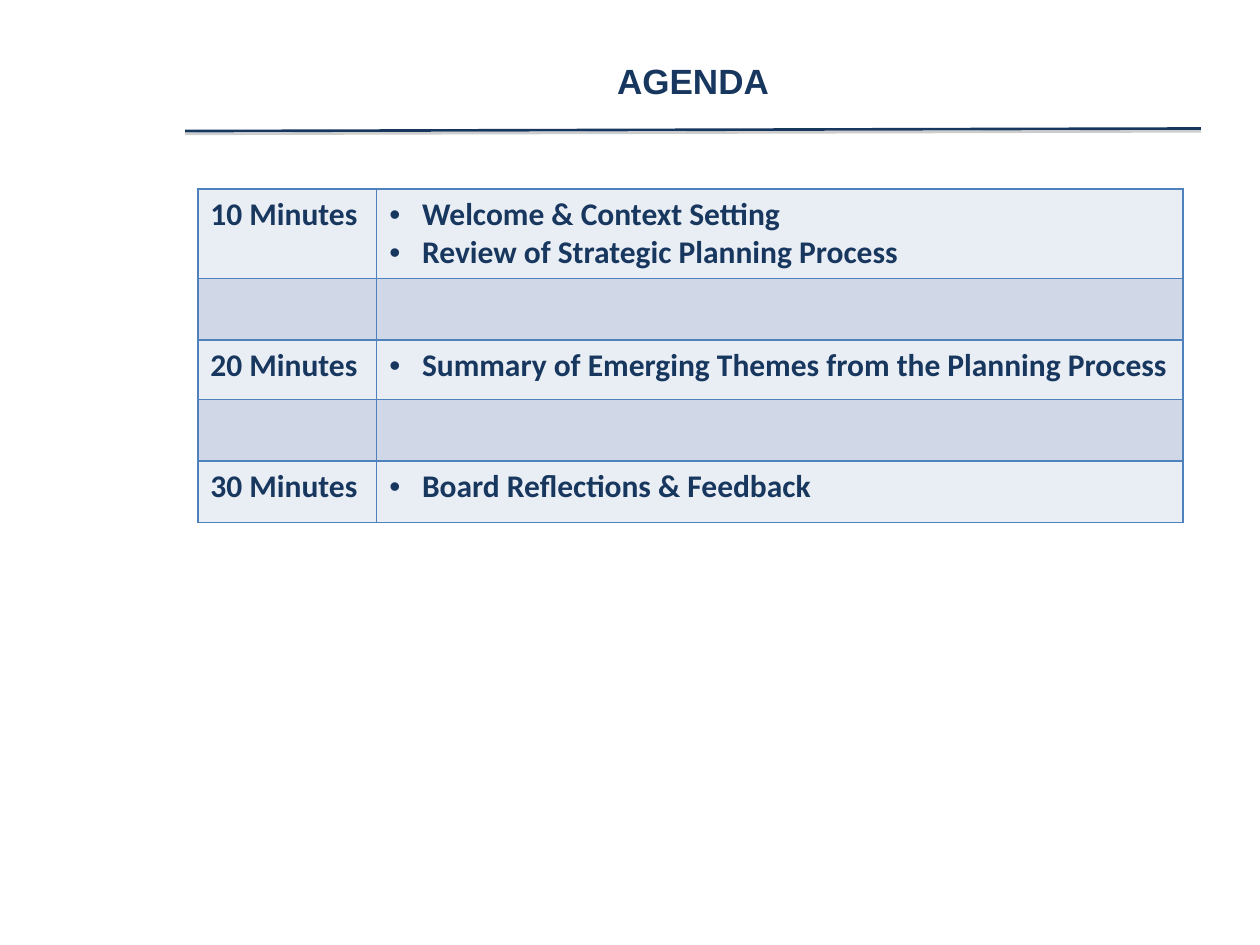
import pptx
import pptx.util
import pptx.oxml
import pptx.oxml.ns
from pptx.dml.color import RGBColor
from pptx.enum.shapes import MSO_CONNECTOR
from pptx.enum.text import MSO_ANCHOR, PP_ALIGN

NAVY = RGBColor(0x17, 0x37, 0x5E)
BORDER_BLUE = RGBColor(0x4F, 0x81, 0xBD)
PALE_BAND = RGBColor(0xE9, 0xED, 0xF4)
DEEP_BAND = RGBColor(0xD0, 0xD8, 0xE8)
SHADOW_GRAY = RGBColor(0x80, 0x80, 0x80)

WIDTH = pptx.util.Inches(10)
HEIGHT = pptx.util.Inches(7.5)
COLUMN_SHARES = (14.2, 64)
ROW_SHARES = (9.47, 6.53, 6.27, 6.53, 6.53)
AGENDA = (
    ("10 Minutes", ("Welcome & Context Setting",
                    "Review of Strategic Planning Process")),
    ("", ()),
    ("20 Minutes", ("Summary of Emerging Themes from the Planning Process",)),
    ("", ()),
    ("30 Minutes", ("Board Reflections & Feedback",)),
)


def across(percent):
    return pptx.util.Emu(round(WIDTH * percent / 100))


def down(percent):
    return pptx.util.Emu(round(HEIGHT * percent / 100))


def xml(tag, content="", **attributes):
    """Make a DrawingML element from its tag, inner markup and attributes."""
    listed = "".join(f' {name}="{value}"' for name, value in attributes.items())
    space = pptx.oxml.ns.nsdecls("a")
    return pptx.oxml.parse_xml(f"<a:{tag} {space}{listed}>{content}</a:{tag}>")


def write(frame, *lines, font="Calibri", size=18, align=PP_ALIGN.LEFT, bullet=False):
    """Fill a text frame with one bold navy paragraph per line."""
    for index, line in enumerate(lines):
        para = frame.add_paragraph() if index else frame.paragraphs[0]
        para.alignment = align
        if bullet:
            indent = pptx.util.Inches(0.26)
            properties = para._p.get_or_add_pPr()
            properties.set("marL", str(indent))
            properties.set("indent", str(-indent))
            properties.append(xml("buFont", typeface="Arial"))
            properties.append(xml("buChar", char="•"))
        span = para.add_run()
        span.text = line
        span.font.name = font
        span.font.size = pptx.util.Pt(size)
        span.font.bold = True
        span.font.color.rgb = NAVY


def add_title(page, text):
    box = page.shapes.add_textbox(across(14.6), down(4), across(80.8), down(9.07))
    box.text_frame.word_wrap = True
    box.text_frame.vertical_anchor = MSO_ANCHOR.MIDDLE
    write(box.text_frame, text, font="Arial", size=20, align=PP_ALIGN.CENTER)


def add_rule(page):
    rule = page.shapes.add_connector(
        MSO_CONNECTOR.STRAIGHT, across(14.7), down(13.87), across(95.3), down(13.6))
    rule.line.color.rgb = NAVY
    rule.line.width = pptx.util.Pt(1.5)
    shadow = (f'<a:outerShdw dist="{pptx.util.Pt(1.6)}" dir="5400000" rotWithShape="0">'
              f'<a:srgbClr val="{SHADOW_GRAY}"><a:alpha val="38000"/></a:srgbClr>'
              '</a:outerShdw>')
    rule._element.spPr.append(xml("effectLst", shadow))


def style_cell(cell, color):
    """Give a cell blue borders and a solid fill."""
    properties = cell._tc.get_or_add_tcPr()
    stroke = f'<a:solidFill><a:srgbClr val="{BORDER_BLUE}"/></a:solidFill>'
    for side in ("lnL", "lnR", "lnT", "lnB"):
        properties.append(xml(side, stroke, w=pptx.util.Pt(1)))
    cell.fill.solid()
    cell.fill.fore_color.rgb = color


def add_agenda(page):
    table = page.shapes.add_table(
        len(AGENDA), len(COLUMN_SHARES), across(15.7), down(20),
        across(sum(COLUMN_SHARES)), down(sum(ROW_SHARES))).table
    for column, share in zip(table.columns, COLUMN_SHARES):
        column.width = across(share)
    for index, (duration, topics) in enumerate(AGENDA):
        row = table.rows[index]
        row.height = down(ROW_SHARES[index])
        for cell in row.cells:
            style_cell(cell, DEEP_BAND if index % 2 else PALE_BAND)
        if duration:
            write(row.cells[0].text_frame, duration)
            write(row.cells[1].text_frame, *topics, bullet=True)


def main():
    deck = pptx.Presentation()
    deck.slide_width, deck.slide_height = WIDTH, HEIGHT
    page = deck.slides.add_slide(deck.slide_layouts[6])
    add_rule(page)
    add_title(page, "AGENDA")
    add_agenda(page)
    deck.save("out.pptx")


if __name__ == "__main__":
    main()
